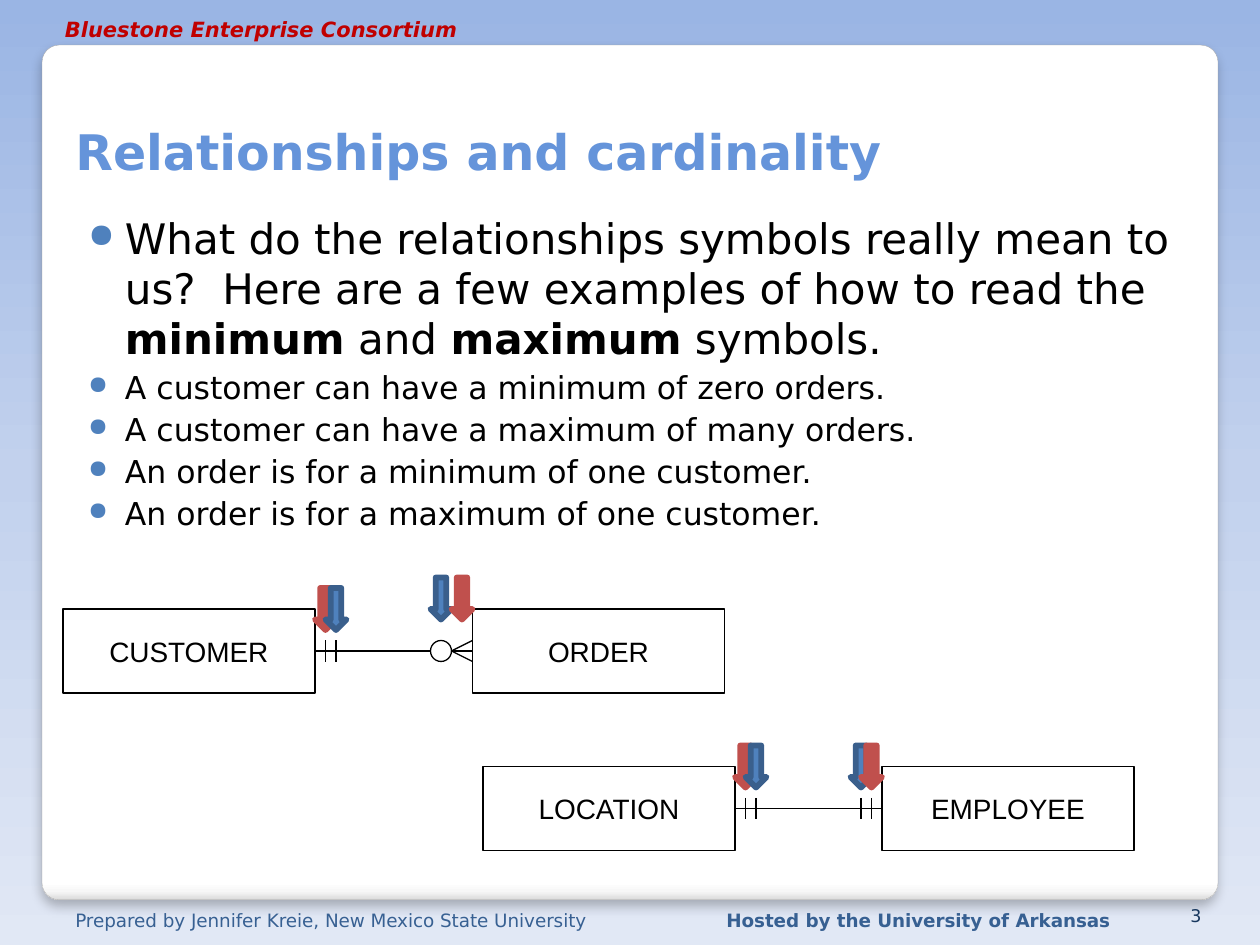
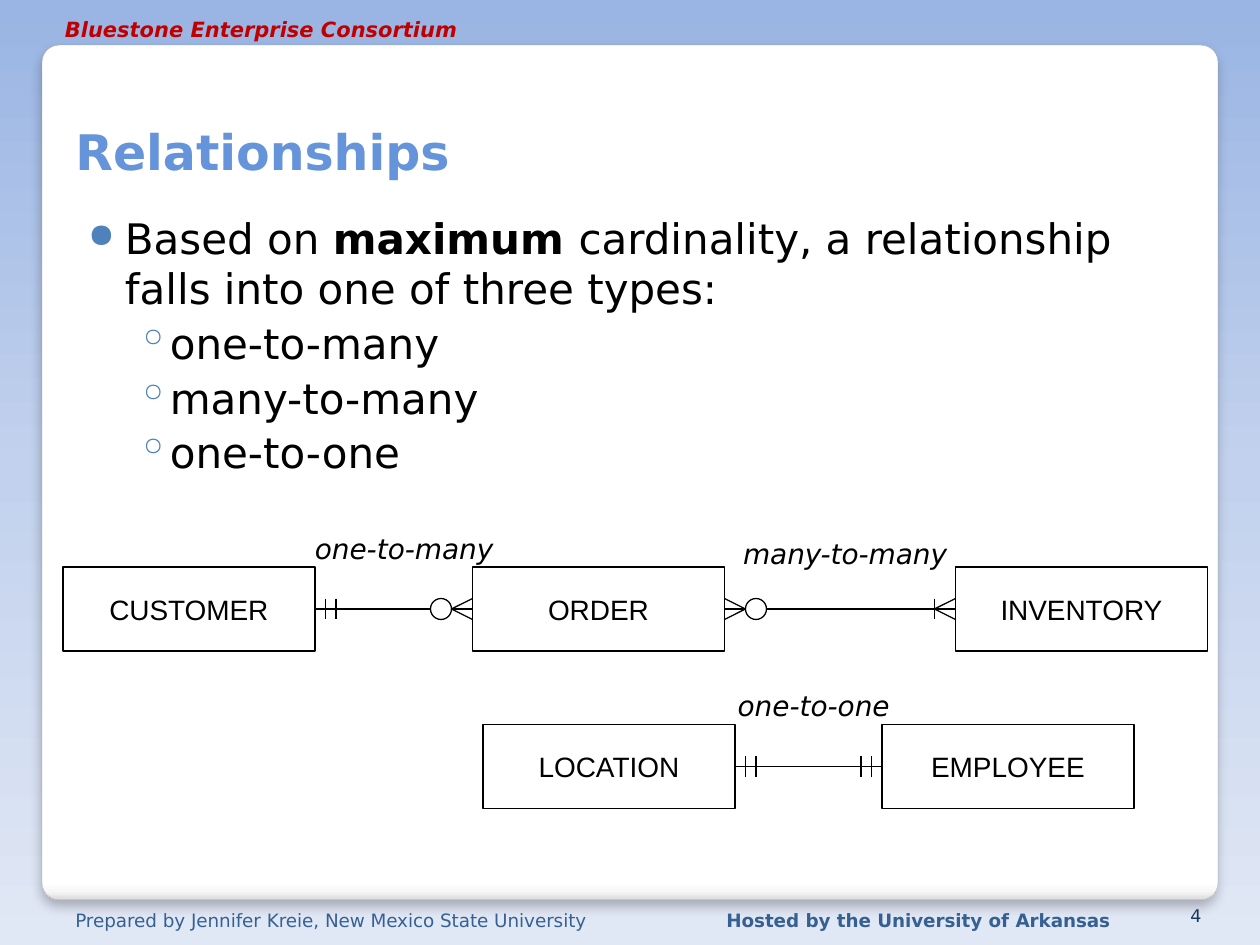
import pptx
import pptx.dml.color
import pptx.enum.shapes
import pptx.enum.text
import pptx.oxml
import pptx.oxml.ns
import pptx.util
from lxml import etree

PX = 7620  # EMU per px, 120 px to the inch
FONT = "DejaVu Sans"
BLACK, WHITE, BLUE, RED = "000000", "FFFFFF", "4F81BD", "C0504D"
NAVY, TITLE_BLUE, FOOTER_BLUE, HEADER_RED = "17375E", "6594DA", "376092", "C00000"
BACKDROP = [(0, "9AB5E4"), (50, "C2D1ED"), (100, "E1E8F5")]
PANEL = [(0, WHITE), (98, WHITE), (99, "F7F7F7"), (100, "DADADA")]
ARROW_LINE = {BLUE: "3A5F8C", RED: RED}
BOX_W, BOX_H = 240, 80

rgb = pptx.dml.color.RGBColor.from_string
qn = pptx.oxml.ns.qn
Pt = pptx.util.Pt
SHAPE = pptx.enum.shapes.MSO_SHAPE
STRAIGHT = pptx.enum.shapes.MSO_CONNECTOR.STRAIGHT
ALIGN = pptx.enum.text.PP_ALIGN
ANCHOR = pptx.enum.text.MSO_ANCHOR


def add_text(s, box, text, size, color, bold=False, italic=False,
             align=ALIGN.LEFT, anchor=ANCHOR.TOP):
    sp = s.shapes.add_textbox(*[v * PX for v in box])
    tf = sp.text_frame
    tf.word_wrap = True
    tf.vertical_anchor = anchor
    tf.text = text
    p = tf.paragraphs[0]
    p.alignment = align
    f = p.runs[0].font
    f.name, f.size, f.bold, f.italic = FONT, Pt(size), bold, italic
    f.color.rgb = rgb(color)


def add_line(s, x1, y1, x2, y2):
    c = s.shapes.add_connector(STRAIGHT, x1 * PX, y1 * PX, x2 * PX, y2 * PX)
    c.line.color.rgb = rgb(BLACK)
    c.line.width = Pt(0.75)
    etree.SubElement(c._element.spPr, qn("a:effectLst"))
    return c


# Body paragraphs are (level, size, text), with *bold* words between stars.
# Relations are (left entity, its end, right entity, its end).
slides = [
    {
        "number": 3,
        "title": "Relationships and cardinality",
        "body": [
            (0, 24, "What do the relationships symbols really mean to us?  Here are a few "
                    "examples of how to read the *minimum* and *maximum* symbols."),
            (0, 18, "A customer can have a minimum of zero orders."),
            (0, 18, "A customer can have a maximum of many orders."),
            (0, 18, "An order is for a minimum of one customer."),
            (0, 18, "An order is for a maximum of one customer."),
        ],
        "entities": {"LOCATION": (460, 730), "EMPLOYEE": (840, 730),
                     "CUSTOMER": (60, 580), "ORDER": (450, 580)},
        "relations": [("CUSTOMER", "one", "ORDER", "zero-many"),
                      ("LOCATION", "one", "EMPLOYEE", "one")],
        "arrows": [(410, 550, BLUE), (430, 550, RED), (300, 560, RED), (310, 560, BLUE),
                   (810, 710, BLUE), (820, 710, RED), (700, 710, RED), (710, 710, BLUE)],
        "labels": [],
    },
    {
        "number": 4,
        "title": "Relationships",
        "body": [
            (0, 24, "Based on *maximum *cardinality, a relationship falls into one of "
                    "three types:"),
            (1, 24, "one-to-many"),
            (1, 24, "many-to-many"),
            (1, 24, "one-to-one"),
        ],
        "entities": {"LOCATION": (460, 690), "EMPLOYEE": (840, 690),
                     "CUSTOMER": (60, 540), "INVENTORY": (910, 540), "ORDER": (450, 540)},
        "relations": [("CUSTOMER", "one", "ORDER", "zero-many"),
                      ("ORDER", "zero-many", "INVENTORY", "one-many"),
                      ("LOCATION", "one", "EMPLOYEE", "one")],
        "arrows": [],
        "labels": [(270, 500, "one-to-many"), (690, 505, "many-to-many"),
                   (660, 650, "one-to-one")],
    },
]

prs = pptx.Presentation()
prs.slide_width, prs.slide_height = 1200 * PX, 900 * PX

for content in slides:
    s = prs.slides.add_slide(prs.slide_layouts[6])

    # Backdrop and white panel, both with vertical gradients
    panel = s.shapes.add_shape(SHAPE.ROUNDED_RECTANGLE, 40 * PX, 43 * PX, 1120 * PX, 814 * PX)
    panel.adjustments[0] = 0.02
    panel.line.color.rgb = rgb("A4A4A4")
    panel.line.width = Pt(0.16)
    for fill in (s.background.fill, panel.fill):
        fill.gradient()
        fill.gradient_angle = 270
    for gs_list, stops in zip(s._element.xpath(".//a:gsLst"), (BACKDROP, PANEL)):
        for gs in list(gs_list):
            gs_list.remove(gs)
        for pos, color in stops:
            gs = etree.SubElement(gs_list, qn("a:gs"), pos=str(pos * 1000))
            etree.SubElement(gs, qn("a:srgbClr"), val=color)
    panel.shadow.inherit = False
    shadow = etree.SubElement(panel._element.spPr.find(qn("a:effectLst")), qn("a:outerShdw"),
                              blurRad=str(Pt(6)), dist=str(Pt(4)), dir="5400000",
                              algn="t", rotWithShape="0")
    shade = etree.SubElement(shadow, qn("a:srgbClr"), val=BLACK)
    etree.SubElement(shade, qn("a:alpha"), val="25000")

    # Header, footers, title and slide number
    add_text(s, (50, 10, 400, 28), "Bluestone Enterprise Consortium", 12, HEADER_RED,
             bold=True, italic=True)
    add_text(s, (60, 860, 535, 28), "Prepared by Jennifer Kreie, New Mexico State University",
             10.5, FOOTER_BLUE)
    add_text(s, (680, 860, 400, 28), "Hosted by the University of Arkansas", 10.5, FOOTER_BLUE,
             bold=True)
    add_text(s, (60, 40, 1074, 138), content["title"], 28, TITLE_BLUE, bold=True,
             anchor=ANCHOR.BOTTOM)
    add_text(s, (1096, 860, 60, 28), str(content["number"]), 10, NAVY,
             align=ALIGN.RIGHT, anchor=ANCHOR.BOTTOM)

    # Bulleted body
    tf = s.shapes.add_textbox(60 * PX, 190 * PX, 1074 * PX, 600 * PX).text_frame
    tf.word_wrap = True
    tf.margin_left, tf.margin_top = 24 * PX, 12 * PX
    for i, (level, size, text) in enumerate(content["body"]):
        p = tf.add_paragraph() if i else tf.paragraphs[0]
        p.level = level
        p.space_before = Pt(2.5)
        margin, hang, bullet, percent = [(35, 35, "●", 80), (72, 26, "◦", 100)][level]
        pPr = p._p.get_or_add_pPr()
        pPr.set("marL", str(margin * PX))
        pPr.set("indent", str(-hang * PX))
        color = etree.SubElement(pPr, qn("a:buClr"))
        etree.SubElement(color, qn("a:srgbClr"), val=BLUE)
        etree.SubElement(pPr, qn("a:buSzPct"), val=str(percent * 1000))
        etree.SubElement(pPr, qn("a:buChar"), char=bullet)
        for j, part in enumerate(text.split("*")):
            r = p.add_run()
            r.text = part
            r.font.name, r.font.size, r.font.bold = FONT, Pt(size), j % 2 == 1
            r.font.color.rgb = rgb(BLACK)

    # Entity boxes
    boxes = {}
    for name, (x, y) in content["entities"].items():
        sp = s.shapes.add_shape(SHAPE.RECTANGLE, x * PX, y * PX, BOX_W * PX, BOX_H * PX)
        sp.shadow.inherit = False
        sp.fill.background()
        sp.line.color.rgb = rgb(BLACK)
        sp.line.width = Pt(0.75)
        tf = sp.text_frame
        tf.word_wrap = False
        tf.vertical_anchor = ANCHOR.MIDDLE
        tf.text = name
        p = tf.paragraphs[0]
        p.alignment = ALIGN.CENTER
        f = p.runs[0].font
        f.name, f.size = "Arial", Pt(16)
        f.color.rgb = rgb(BLACK)
        boxes[name] = sp

    # Relationship lines with crow's-foot symbols at each end
    for left, left_end, right, right_end in content["relations"]:
        x1, x2 = content["entities"][left][0] + BOX_W, content["entities"][right][0]
        y = content["entities"][left][1] + BOX_H // 2
        c = add_line(s, x1, y, x2, y)
        c.begin_connect(boxes[left], 3)
        c.end_connect(boxes[right], 1)
        for x, out, end in ((x1, 1, left_end), (x2, -1, right_end)):
            tip = x + 20 * out
            ticks = {"one": (x + 10 * out, tip), "one-many": (tip,), "zero-many": ()}[end]
            for tick in ticks:
                add_line(s, tick, y - 10, tick, y + 10)
            if end.endswith("many"):
                for dy in (10, -10):
                    add_line(s, tip, y, x, y + dy)
            if end == "zero-many":
                sp = s.shapes.add_shape(SHAPE.OVAL, (tip + 10 * out - 10) * PX, (y - 10) * PX,
                                        20 * PX, 20 * PX)
                sp.shadow.inherit = False
                sp.fill.solid()
                sp.fill.fore_color.rgb = rgb(WHITE)
                sp.line.color.rgb = rgb(BLACK)
                sp.line.width = Pt(0.75)

    # Arrows pointing at the minimum and maximum symbols
    for x, y, color in content["arrows"]:
        sp = s.shapes.add_shape(SHAPE.DOWN_ARROW, x * PX, y * PX, 20 * PX, 40 * PX)
        sp.shadow.inherit = False
        sp.fill.solid()
        sp.fill.fore_color.rgb = rgb(color)
        sp.line.color.rgb = rgb(ARROW_LINE[color])
        sp.line.width = Pt(3.35)

    # Relationship type labels
    for x, y, label in content["labels"]:
        add_text(s, (x, y, 230, 44), label, 16, BLACK, italic=True, align=ALIGN.CENTER)

prs.save("out.pptx")
